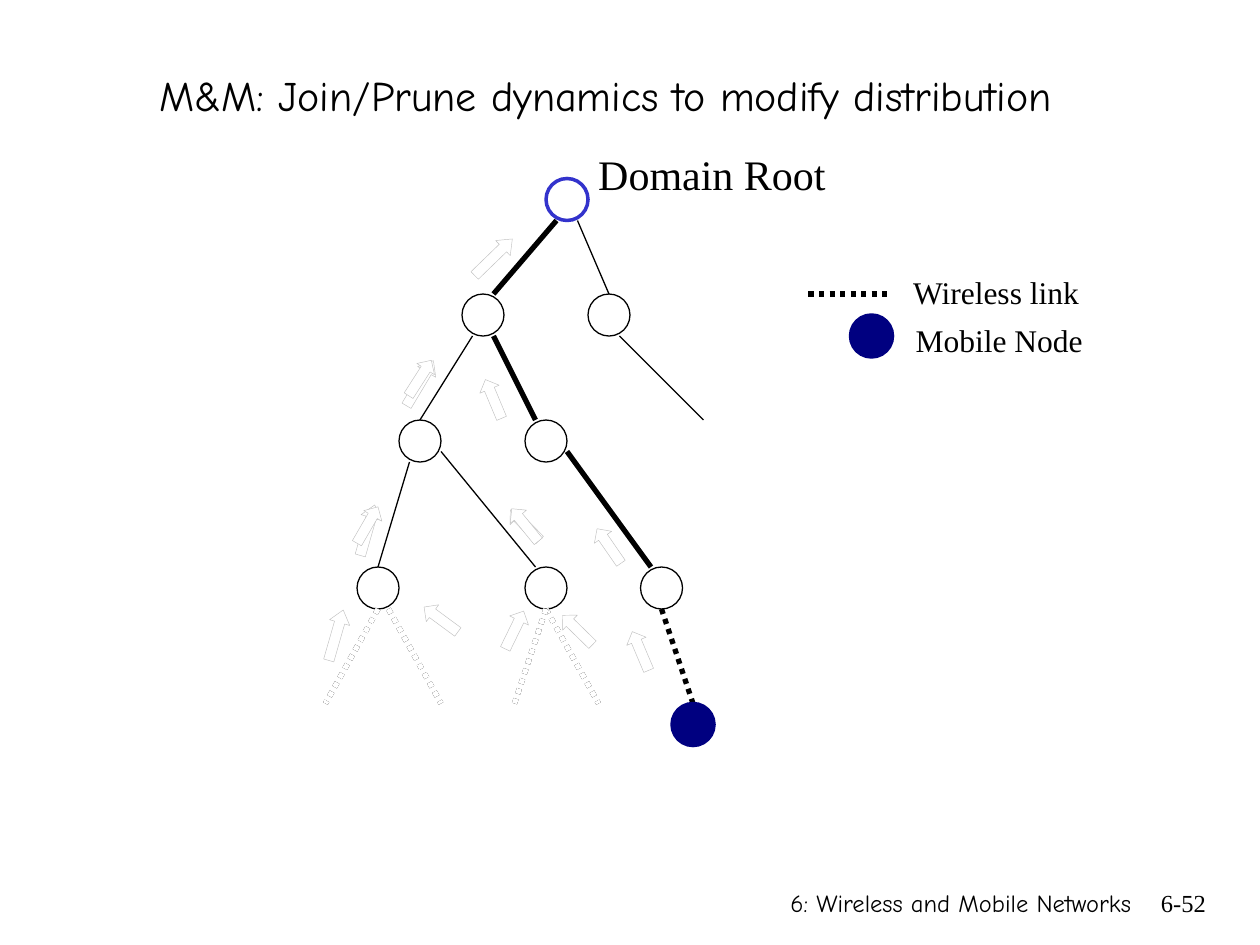
from lxml import etree
from pptx import Presentation
from pptx.dml.color import RGBColor
from pptx.enum.dml import MSO_LINE
from pptx.enum.shapes import MSO_CONNECTOR, MSO_SHAPE
from pptx.enum.text import MSO_ANCHOR, PP_ALIGN
from pptx.oxml.ns import qn
from pptx.util import Cm, Pt

BLACK = RGBColor(0x00, 0x00, 0x00)
WHITE = RGBColor(0xFF, 0xFF, 0xFF)
GREY = RGBColor(0xC0, 0xC0, 0xC0)
BLUE = RGBColor(0x33, 0x33, 0xCC)
NAVY = RGBColor(0x00, 0x00, 0x80)

OVAL = MSO_SHAPE.OVAL
ARROW = MSO_SHAPE.UP_ARROW
STRAIGHT = MSO_CONNECTOR.STRAIGHT
DOTS = MSO_LINE.ROUND_DOT
TOP = MSO_ANCHOR.TOP
LEFT = PP_ALIGN.LEFT
RIGHT = PP_ALIGN.RIGHT

COMIC = "Comic Neue"
TIMES = "Times New Roman"
STEP = 2.54 / 12

NODES = [(44, 28), (56, 28), (38, 40), (50, 40), (34, 54), (50, 54), (61, 54)]
MOBILES = [(64, 67), (81, 30)]
THIN = [(55, 21, 58, 28), (59, 32, 67, 40), (45, 32, 40, 40),
        (39, 44, 36, 54), (42, 43, 51, 54)]
THICK = [(53, 21, 47, 28), (47, 32, 51, 40), (54, 43, 62, 54)]
RADIO = [(63, 58, 66, 67), (77, 28, 85, 28)]
PRUNED = [(36, 58, 31, 67), (37, 58, 42, 67), (52, 58, 57, 67), (52, 58, 49, 67)]
ARROWS = [(31, 58, 5, 16), (34, 48, 5, 16), (39, 34, 5, 30.8), (46, 22, 5, 45.9),
          (49, 48, 4, 315.7), (48, 58, 4, 26), (41, 57, 4, 306.4),
          (34, 48, 4, 30.1), (60, 60, 4, 337.1), (57, 50, 4, 325.4),
          (46, 36, 4, 337.3), (54, 58, 4, 314.4), (49, 48, 4, 320.8),
          (39, 34, 4, 32.7)]


def grid(*steps):
    """Turn steps of the drawing grid into lengths."""
    return [Cm(step * STEP) for step in steps]


def add_form(slide, kind, box, line, width, fill=None):
    """Add an outlined shape, filled when a colour is given."""
    form = slide.shapes.add_shape(kind, *grid(*box))
    form.shadow.inherit = False
    form.line.color.rgb = line
    form.line.width = Pt(width)
    if fill is None:
        form.fill.background()
    else:
        form.fill.solid()
        form.fill.fore_color.rgb = fill
    return form


def add_node(slide, spot, line=BLACK, width=0.75, fill=None):
    """Add a round tree node."""
    add_form(slide, OVAL, (*spot, 4, 4), line, width, fill)


def add_arrow(slide, left, top, height, turn):
    """Add a faint arrow turned along its link."""
    arrow = add_form(slide, ARROW, (left, top, 2, height), GREY, 0.25, WHITE)
    arrow.adjustments[0] = 0.5
    arrow.adjustments[1] = height / 8
    arrow.rotation = turn


def add_link(slide, ends, width, color=BLACK, dash=None):
    """Add a straight link between two grid points."""
    link = slide.shapes.add_connector(STRAIGHT, *grid(*ends))
    link.line.color.rgb = color
    link.line.width = Pt(width)
    if dash is not None:
        link.line.dash_style = dash
    etree.SubElement(link._element.spPr, qn("a:effectLst"))


def set_text(box, text, size, font, align=LEFT, wrap=False):
    """Write one line of text into a box."""
    frame = box.text_frame
    frame.word_wrap = wrap
    frame.vertical_anchor = TOP
    frame.text = text
    line = frame.paragraphs[0]
    line.alignment = align
    line.font.size = Pt(size)
    line.font.name = font
    line.font.color.rgb = BLACK


def add_label(slide, box, *style):
    """Add a text box with one line."""
    label = slide.shapes.add_textbox(*[Cm(length) for length in box])
    set_text(label, *style)


def add_title(slide, text):
    """Move and fill the title."""
    title = slide.shapes.title
    title.left, title.top, title.width, title.height = (
        Cm(2.96), Cm(1.27), Cm(20.17), Cm(1.27))
    set_text(title, text, 24, COMIC)


def add_tree(slide):
    """Draw the tree with its links and arrows."""
    add_node(slide, (52, 17), BLUE, 2)
    for spot in NODES:
        add_node(slide, spot)
    for ends in THIN:
        add_link(slide, ends, 0.75)
    for ends in THICK:
        add_link(slide, ends, 3)
    for ends in RADIO:
        add_link(slide, ends, 3, dash=DOTS)
    for ends in PRUNED:
        for color in (BLACK, WHITE):
            add_link(slide, ends, 3, color, DOTS)
    for spot in MOBILES:
        add_node(slide, spot, NAVY, 2, NAVY)
    for arrow in ARROWS:
        add_arrow(slide, *arrow)


def main():
    """Build and save the slide."""
    deck = Presentation()
    deck.slide_width, deck.slide_height = Cm(25.4), Cm(19.05)
    slide = deck.slides.add_slide(deck.slide_layouts[5])
    add_title(slide, "M&M: Join/Prune dynamics to modify distribution")
    add_tree(slide)
    add_label(slide, (11.81, 2.87, 5.1, 1.27), "Domain Root", 24, TIMES)
    add_label(slide, (18.16, 5.38, 3.89, 1.02), "Wireless link", 18, TIMES)
    add_label(slide, (18.21, 6.35, 3.89, 1.02), "Mobile Node", 18, TIMES)
    add_label(slide, (12.34, 17.78, 10.72, 1.27),
              "6: Wireless and Mobile Networks", 14, COMIC, RIGHT, True)
    add_label(slide, (22.68, 17.78, 1.88, 1.27), "6-52", 14, TIMES, RIGHT, True)
    deck.save("out.pptx")


if __name__ == "__main__":
    main()
